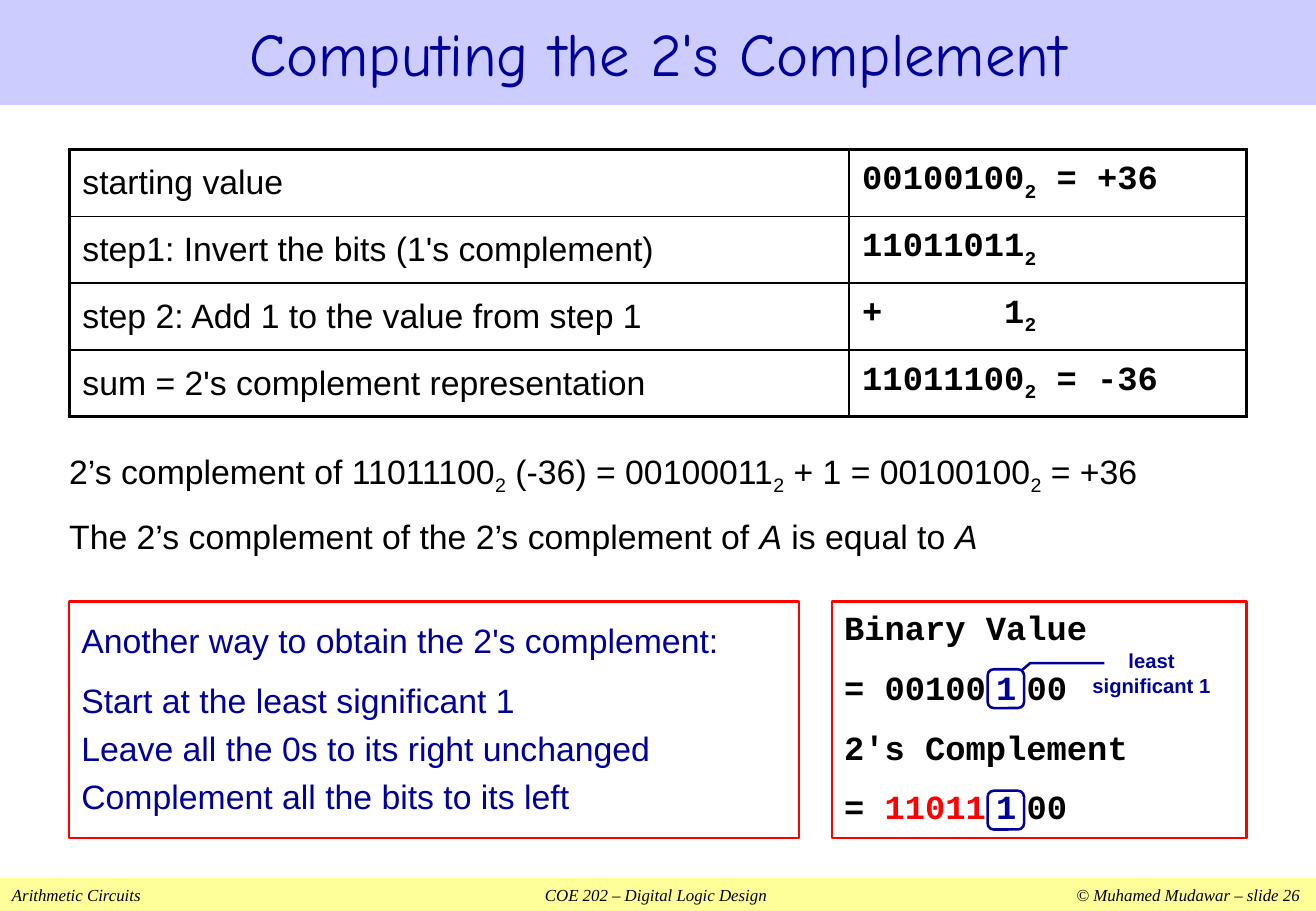
import pptx
import pptx.dml.color
import pptx.enum.shapes
import pptx.enum.text
import pptx.oxml
import pptx.oxml.ns
import pptx.util
from lxml import etree

Pt = pptx.util.Pt
ALIGN = pptx.enum.text.PP_ALIGN
ANCHOR = pptx.enum.text.MSO_ANCHOR
SHAPE = pptx.enum.shapes.MSO_SHAPE

SANS, MONO, SERIF, HAND = "Arial", "Courier New", "Times New Roman", "Comic Neue"
BLACK, NAVY, RED = "000000", "000099", "FF0000"
LEFT, WIDTH = 41, 697.7
BOX_TOP, BOX_HEIGHT = 356.4, 140.4
MARK_LEFT, MARK_WIDTH, MARK_HEIGHT = 585.4, 21.6, 23

SUB = ("2", {"baseline": -25000})
GAP = (" ", {"size": 10})
ONE = ("1", {"color": NAVY})


def rgb(value):
    return pptx.dml.color.RGBColor.from_string(value)


def add_child(parent, tag, **attributes):
    child = etree.SubElement(parent, pptx.oxml.ns.qn(tag))
    for name, value in attributes.items():
        child.set(name, str(value))
    return child


class SlideBuilder:
    """Draws elements on one slide; all lengths are in points."""

    def __init__(self, slide):
        self.slide = slide

    def style_font(self, font, name=None, size=None, color=None, bold=None, italic=None):
        if name:
            font.name = name
        if size:
            font.size = Pt(size)
        if color:
            font.color.rgb = rgb(color)
        if bold is not None:
            font.bold = bold
        if italic is not None:
            font.italic = italic

    def fill_text(self, frame, paragraphs, align=ALIGN.LEFT, space=(), **style):
        """Fill a text frame; a paragraph is a list of strings or (string, style) pairs."""
        for index, parts in enumerate(paragraphs):
            paragraph = frame.paragraphs[0] if index == 0 else frame.add_paragraph()
            paragraph.alignment = align
            paragraph.space_before = Pt(space[index] if space else 0)
            self.style_font(paragraph.font, **style)
            for part in parts:
                text, changes = (part, {}) if isinstance(part, str) else part
                changes = dict(changes)
                baseline = changes.pop("baseline", None)
                run = paragraph.add_run()
                run.text = text
                self.style_font(run.font, **changes)
                if baseline:
                    run._r.get_or_add_rPr().set("baseline", str(baseline))

    def set_frame(self, frame, anchor=ANCHOR.TOP, insets=(7.2, 3.6)):
        frame.word_wrap = True
        frame.auto_size = pptx.enum.text.MSO_AUTO_SIZE.NONE
        frame.vertical_anchor = anchor
        frame.margin_left = frame.margin_right = Pt(insets[0])
        frame.margin_top = frame.margin_bottom = Pt(insets[1])
        return frame

    def paint(self, shape, fill=None, line=None):
        if fill:
            shape.fill.solid()
            shape.fill.fore_color.rgb = rgb(fill)
        else:
            shape.fill.background()
        if line:
            shape.line.color.rgb = rgb(line)
            shape.line.width = Pt(1.5)
        else:
            shape.line.fill.background()

    def placeholder(self, index, left, top, width, height, fill=None, line=None):
        shape = self.slide.placeholders[index]
        shape.left, shape.top = Pt(left), Pt(top)
        shape.width, shape.height = Pt(width), Pt(height)
        self.paint(shape, fill, line)
        return shape

    def title(self, text, left, top, width, height, fill, **style):
        shape = self.placeholder(0, left, top, width, height, fill)
        frame = self.set_frame(shape.text_frame, ANCHOR.MIDDLE)
        self.fill_text(frame, [[text]], ALIGN.CENTER, **style)

    def body(self, paragraphs, left, top, width, height, line, insets, **style):
        shape = self.placeholder(1, left, top, width, height, line=line)
        frame = self.set_frame(shape.text_frame, insets=insets)
        self.fill_text(frame, paragraphs, **style)
        for paragraph in frame.paragraphs:
            properties = paragraph._p.get_or_add_pPr()
            properties.set("marL", "0")
            properties.set("indent", "0")
            bullet = pptx.oxml.parse_xml("<a:buNone %s/>" % pptx.oxml.ns.nsdecls("a"))
            properties.find(pptx.oxml.ns.qn("a:defRPr")).addprevious(bullet)

    def shape(self, kind, left, top, width, height, fill=None, line=None):
        shape = self.slide.shapes.add_shape(kind, Pt(left), Pt(top), Pt(width), Pt(height))
        shape.shadow.inherit = False
        self.paint(shape, fill, line)
        return shape

    def text(self, paragraphs, left, top, width, height, anchor=ANCHOR.TOP, insets=(0, 0), **style):
        box = self.slide.shapes.add_textbox(Pt(left), Pt(top), Pt(width), Pt(height))
        self.fill_text(self.set_frame(box.text_frame, anchor, insets), paragraphs, **style)

    def footer(self, parts, left, top, width, height, fill, tabs, **style):
        shape = self.shape(SHAPE.RECTANGLE, left, top, width, height, fill)
        frame = self.set_frame(shape.text_frame)
        self.fill_text(frame, [["\t".join(parts)]], **style)
        properties = frame.paragraphs[0]._p.get_or_add_pPr()
        stops = pptx.oxml.parse_xml("<a:tabLst %s/>" % pptx.oxml.ns.nsdecls("a"))
        for position, align in tabs:
            add_child(stops, "a:tab", pos=Pt(position), algn=align)
        properties.find(pptx.oxml.ns.qn("a:defRPr")).addprevious(stops)

    def polyline(self, points, color):
        (start_x, start_y), *others = [(Pt(x), Pt(y)) for x, y in points]
        builder = self.slide.shapes.build_freeform(start_x, start_y)
        builder.add_line_segments(others, close=False)
        line = builder.convert_to_shape()
        line.shadow.inherit = False
        self.paint(line, line=color)

    def border(self, cell, widths):
        properties = cell._tc.get_or_add_tcPr()
        for index, (side, width) in enumerate(zip("LRTB", widths)):
            edge = add_child(properties, "a:ln" + side, w=Pt(width))
            add_child(add_child(edge, "a:solidFill"), "a:srgbClr", val=BLACK)
            properties.insert(index, edge)

    def table(self, rows, left, top, columns, row_height, fonts, outer=2.25, inner=1):
        """Draw a table whose outer frame is heavier than its inner rules."""
        table = self.slide.shapes.add_table(
            len(rows), len(columns), Pt(left), Pt(top),
            Pt(sum(columns)), Pt(row_height * len(rows))).table
        table.first_row = table.horz_banding = False
        for column, width in zip(table.columns, columns):
            column.width = Pt(width)
        for r, row in enumerate(rows):
            table.rows[r].height = Pt(row_height)
            for c, parts in enumerate(row):
                cell = table.cell(r, c)
                cell.fill.background()
                cell.vertical_anchor = ANCHOR.MIDDLE
                cell.margin_left = cell.margin_right = Pt(7.9)
                self.fill_text(cell.text_frame, [parts], **fonts[c])
                at_edge = (c == 0, c == len(columns) - 1, r == 0, r == len(rows) - 1)
                self.border(cell, [outer if edge else inner for edge in at_edge])


def main():
    presentation = pptx.Presentation()
    presentation.slide_width, presentation.slide_height = Pt(780), Pt(540)
    draw = SlideBuilder(presentation.slides.add_slide(presentation.slide_layouts[1]))
    plain = dict(name=SANS, size=20, color=BLACK)
    code = dict(name=MONO, size=20, color=BLACK, bold=True)

    draw.footer(["Arithmetic Circuits", "COE 202 – Digital Logic Design", "© Muhamed Mudawar – slide 26"],
                0, 520.6, 780, 19.4, "FFFF99", [(381.6, "ctr"), (763.2, "r")],
                name=SERIF, size=10, color=BLACK, italic=True)
    draw.title("Computing the 2's Complement", 0, 0, 780, 62.4, "CCCCFF",
               name=HAND, size=36, color=NAVY)
    draw.table([
        (["starting value"], ["00100100", SUB, " = +36"]),
        (["step1: Invert the bits (1's complement)"], ["11011011", SUB]),
        (["step 2: Add 1 to the value from step 1"], ["+      1", SUB]),
        (["sum = 2's complement representation"], ["11011100", SUB, " = -36"]),
    ], LEFT, 88.6, (462.2, 235.5), 39.6, (plain, code))

    italic_a = ("A", {"italic": True})
    draw.text([
        ["2’s complement of 11011100", SUB, " (-36) = 00100011", SUB, " + 1 = 00100100", SUB, " = +36"],
        ["The 2’s complement of the 2’s complement of ", italic_a, " is equal to ", italic_a],
    ], LEFT, 256.3, WIDTH, 82, insets=(0, 10.8), space=(11.5, 11.5), **plain)

    draw.body([
        ["Another way to obtain the 2's complement:"],
        ["Start at the least significant 1"],
        ["Leave all the 0s to its right unchanged"],
        ["Complement all the bits to its left"],
    ], LEFT, BOX_TOP, 432.7, BOX_HEIGHT, RED, (7.2, 10.8),
        space=(11.5, 11.5, 4.6, 4.6), name=SANS, size=20, color=NAVY)

    example = draw.shape(SHAPE.RECTANGLE, 493.2, BOX_TOP, 245.5, BOX_HEIGHT, line=RED)
    draw.fill_text(draw.set_frame(example.text_frame), [
        ["Binary Value"],
        ["= 00100", GAP, ONE, GAP, "00"],
        ["2's Complement"],
        ["= ", ("11011", {"color": RED}), GAP, ONE, GAP, "00"],
    ], space=(11.3,) * 4, **code)

    for top in (396.7, 468.7):
        draw.shape(SHAPE.ROUNDED_RECTANGLE, MARK_LEFT, top, MARK_WIDTH, MARK_HEIGHT, line=NAVY)
    draw.text([["least"], ["significant 1"]], 640.8, 383, 83.5, 31.7, ANCHOR.MIDDLE,
              align=ALIGN.CENTER, name=SANS, size=12, color=NAVY, bold=True)
    draw.polyline([(654.5, 393.1), (610.6, 393.1), (605.5, 397.4)], NAVY)

    presentation.save("out.pptx")


if __name__ == "__main__":
    main()
